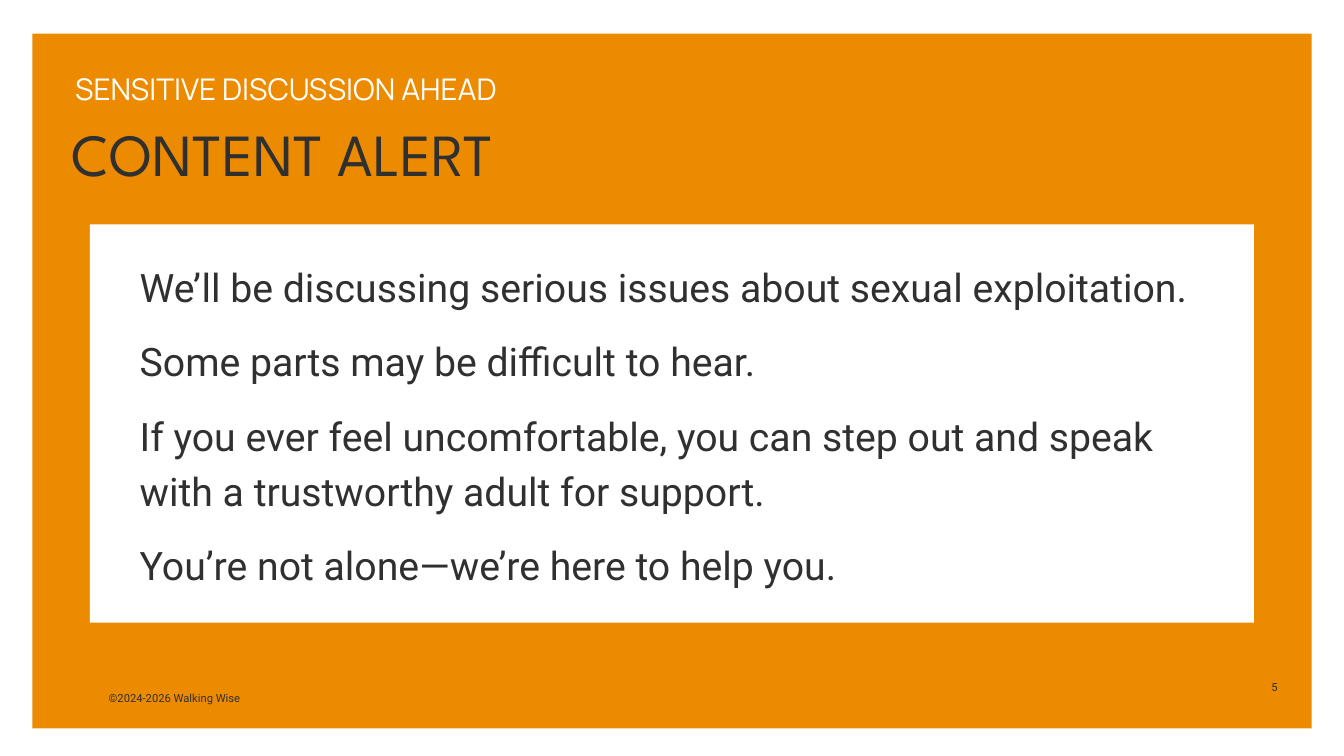
from typing import NamedTuple

from pptx import Presentation
from pptx.dml.color import RGBColor
from pptx.enum.shapes import MSO_SHAPE as Preset
from pptx.enum.text import MSO_ANCHOR as Anchor, MSO_AUTO_SIZE as AutoSize, PP_ALIGN as Align
from pptx.util import Cm, Pt

COLORS = {"orange": "ED8B00", "white": "FFFFFF", "ink": "303030"}
LINE_RATIO = 1.4
TITLE_ONLY = 5


class Area(NamedTuple):
    """A rectangle on the page, in centimetres."""
    left: float
    top: float
    width: float
    height: float


class Panel(NamedTuple):
    area: Area
    color: str


class Label(NamedTuple):
    area: Area
    lines: list[str]
    font: str
    size: int
    color: str = "ink"
    align: Align = Align.LEFT
    gap: int = 0
    wrap: bool = True


PANELS = [
    Panel(Area(1.22, 1.27, 48.36, 26.26), "orange"),
    Panel(Area(3.4, 8.48, 44, 15.06), "white"),
]
TITLE = Label(Area(2.72, 3.96, 25.4, 3.05), ["CONTENT ALERT"], "League Spartan", 64)
LABELS = [
    Label(Area(2.84, 2.46, 40.41, 1.52), ["SENSITIVE DISCUSSION AHEAD"], "Manrope", 32, "white"),
    Label(
        Area(5.28, 9.65, 41.4, 12.47),
        [
            "We’ll be discussing serious issues about sexual exploitation.",
            "Some parts may be difficult to hear.",
            "If you ever feel uncomfortable, you can step out and speak "
            "with a trustworthy adult for support.",
            "You’re not alone—we’re here to help you.",
        ],
        "Roboto", 42, gap=21,
    ),
    Label(Area(47.96, 25.63, 0.43, 0.51), ["5"], "Roboto", 12, align=Align.CENTER, wrap=False),
    Label(Area(4.11, 26.04, 6.55, 0.58), ["©2024-2026 Walking Wise"], "Roboto", 12),
]


def rgb(name: str) -> RGBColor:
    return RGBColor.from_string(COLORS[name])


def draw_panel(page, panel: Panel) -> None:
    """Draw a filled rectangle behind the title."""
    shape = page.shapes.add_shape(Preset.RECTANGLE, *map(Cm, panel.area))
    shape.shadow.inherit = False
    shape.fill.solid()
    shape.fill.fore_color.rgb = rgb(panel.color)
    shape.line.fill.background()
    page.shapes.title.element.addprevious(shape.element)


def write_label(box, label: Label) -> None:
    """Place the box and fill it with the label's formatted paragraphs."""
    box.left, box.top, box.width, box.height = map(Cm, label.area)
    frame = box.text_frame
    frame.margin_left = frame.margin_top = frame.margin_right = frame.margin_bottom = 0
    frame.vertical_anchor = Anchor.TOP
    frame.auto_size = AutoSize.NONE
    frame.word_wrap = label.wrap
    frame.text = "\n".join(label.lines)
    for index, para in enumerate(frame.paragraphs):
        para.alignment = label.align
        para.line_spacing = Pt(label.size * LINE_RATIO)
        para.space_before = Pt(label.gap if index else 0)
        para.font.name = label.font
        para.font.size = Pt(label.size)
        para.font.color.rgb = rgb(label.color)


def main() -> None:
    deck = Presentation()
    deck.slide_width, deck.slide_height = Cm(50.8), Cm(28.575)
    page = deck.slides.add_slide(deck.slide_layouts[TITLE_ONLY])
    for panel in PANELS:
        draw_panel(page, panel)
    write_label(page.shapes.title, TITLE)
    for label in LABELS:
        write_label(page.shapes.add_textbox(*map(Cm, label.area)), label)
    deck.save("out.pptx")


if __name__ == "__main__":
    main()
